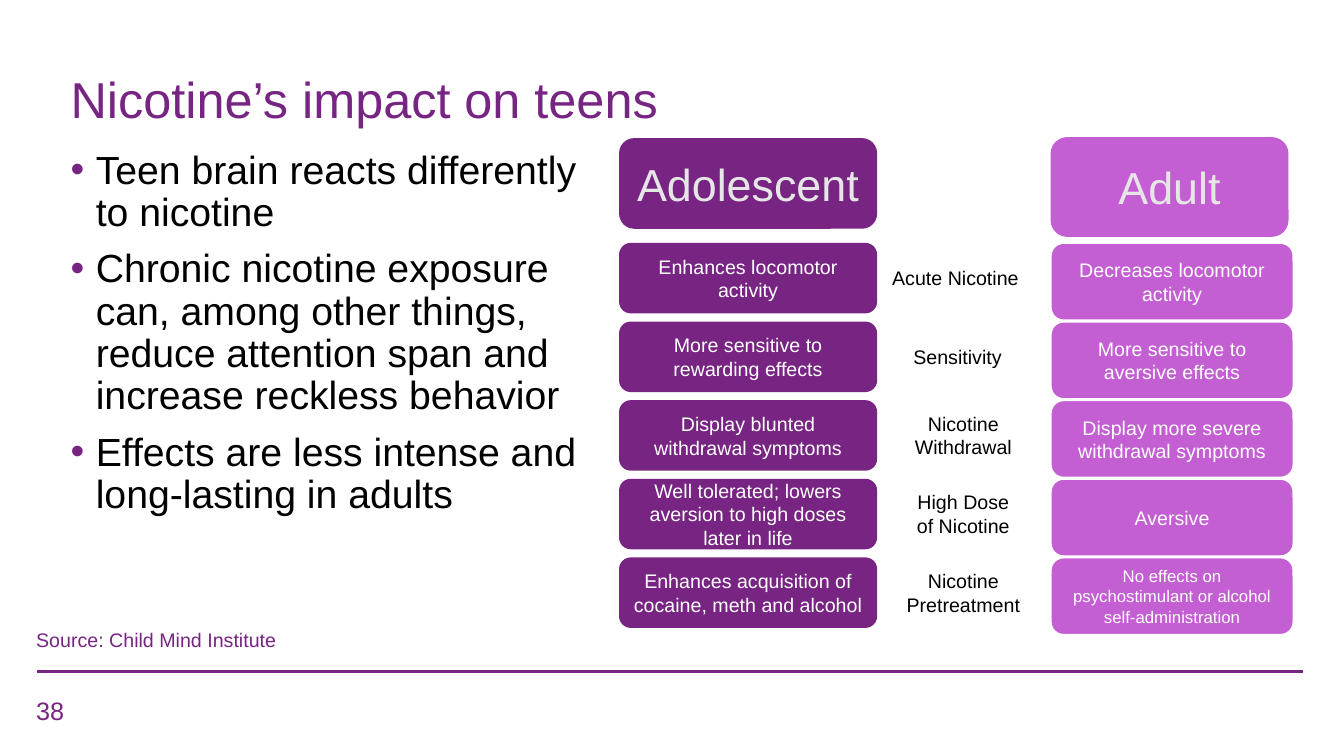
from lxml import etree
from pptx import Presentation
from pptx.dml.color import RGBColor
from pptx.enum.shapes import MSO_CONNECTOR as CONN, MSO_SHAPE as SHAPE
from pptx.enum.text import MSO_ANCHOR as ANCHOR, MSO_AUTO_SIZE as FIT, PP_ALIGN as ALIGN
from pptx.oxml.ns import qn
from pptx.util import Inches, Pt

TITLE_PURPLE = "772583"
PURPLE = "772483"
ORCHID = "C45ED3"
WHITE = "FFFFFF"
BLACK = "000000"
HEADER_GREY = "E7E6E6"

TEEN_LEFT, ADULT_LEFT, LABEL_CENTER = 6.14, 10.42, 9.555
TEEN_WIDTH, ADULT_WIDTH = 2.56, 2.41
TEEN_HEIGHT, ADULT_HEIGHT = 0.7, 0.77
ROW_TOP, ROW_STEP = 2.41, 0.78

BULLETS = [
    "Teen brain reacts differently to nicotine",
    "Chronic nicotine exposure can, among other things, "
    "reduce attention span and increase reckless behavior",
    "Effects are less intense and long-lasting in adults",
]
ROWS = [
    ("Enhances locomotor activity", ["Acute Nicotine"], 1.61,
     "Decreases locomotor activity", 14),
    ("More sensitive to rewarding effects", ["Sensitivity"], 1.19,
     "More sensitive to aversive effects", 14),
    ("Display blunted withdrawal symptoms", ["Nicotine", "Withdrawal"], 1.29,
     "Display more severe withdrawal symptoms", 14),
    ("Well tolerated; lowers aversion to high doses later in life",
     ["High Dose", "of Nicotine"], 1.23, "Aversive", 14),
    ("Enhances acquisition of cocaine, meth and alcohol",
     ["Nicotine", "Pretreatment"], 1.47,
     "No effects on psychostimulant or alcohol self-administration", 12),
]


def color(value):
    return RGBColor.from_string(value)


def place(sp, left, top, width, height):
    sp.left, sp.top = Inches(left), Inches(top)
    sp.width, sp.height = Inches(width), Inches(height)


def add_bullet(p, fill):
    pPr = p._p.get_or_add_pPr()
    pPr.set("marL", str(Inches(0.25)))
    pPr.set("indent", str(-Inches(0.25)))
    bu_clr = etree.SubElement(pPr, qn("a:buClr"))
    etree.SubElement(bu_clr, qn("a:srgbClr")).set("val", fill)
    etree.SubElement(pPr, qn("a:buChar")).set("char", "•")


def write(tf, lines, size=14, fill=BLACK, align=ALIGN.LEFT, anchor=ANCHOR.TOP,
          wrap=True, fit=FIT.NONE, spacing=1.0, before=0, bullet=None):
    tf.word_wrap = wrap
    tf.auto_size = fit
    tf.vertical_anchor = anchor
    for i, line in enumerate(lines):
        p = tf.paragraphs[0] if i == 0 else tf.add_paragraph()
        if bullet:
            add_bullet(p, bullet)
        p.alignment = align
        p.line_spacing = spacing
        p.space_before = Pt(before if i else 0)
        r = p.add_run()
        r.text = line
        r.font.name = "Arial"
        r.font.size = Pt(size)
        r.font.color.rgb = color(fill)


def add_text(s, box, lines, **fmt):
    sp = s.shapes.add_textbox(*map(Inches, box))
    write(sp.text_frame, lines, **fmt)


def add_card(s, box, text, fill, border=None, size=14, text_fill=WHITE):
    sp = s.shapes.add_shape(SHAPE.ROUNDED_RECTANGLE, *map(Inches, box))
    sp.shadow.inherit = False
    sp.fill.solid()
    sp.fill.fore_color.rgb = color(fill)
    if border:
        sp.line.color.rgb = color(border)
        sp.line.width = Pt(1.5)
    else:
        sp.line.fill.background()
    write(sp.text_frame, [text], size=size, fill=text_fill,
          align=ALIGN.CENTER, anchor=ANCHOR.MIDDLE)


def add_rule(s, left, right, y):
    line = s.shapes.add_connector(CONN.STRAIGHT, *map(Inches, (left, y, right, y)))
    line.line.color.rgb = color(TITLE_PURPLE)
    line.line.width = Pt(2.25)
    etree.SubElement(line._element.spPr, qn("a:effectLst"))


def add_label(s, lines, width, middle):
    height = 0.34 if len(lines) == 1 else 0.57
    box = (LABEL_CENTER - width / 2, middle - height / 2, width, height)
    add_text(s, box, lines, wrap=False, fit=FIT.SHAPE_TO_FIT_TEXT,
             align=ALIGN.LEFT if len(lines) == 1 else ALIGN.CENTER)


def add_comparison(s):
    add_card(s, (TEEN_LEFT, 1.37, TEEN_WIDTH, 0.9), "Adolescent", PURPLE,
             size=32, text_fill=HEADER_GREY)
    add_card(s, (ADULT_LEFT, 1.36, 2.36, 0.99), "Adult", ORCHID,
             size=32, text_fill=HEADER_GREY)
    for i, (teen, label, label_width, adult, adult_size) in enumerate(ROWS):
        top = ROW_TOP + i * ROW_STEP
        add_card(s, (TEEN_LEFT, top, TEEN_WIDTH, TEEN_HEIGHT), teen, PURPLE)
        add_label(s, label, label_width, top + TEEN_HEIGHT / 2)
        add_card(s, (ADULT_LEFT, top, ADULT_WIDTH, ADULT_HEIGHT), adult, ORCHID,
                 border=WHITE, size=adult_size)


def main():
    prs = Presentation()
    prs.slide_width, prs.slide_height = Inches(13.33), Inches(7.5)
    s = prs.slides.add_slide(prs.slide_layouts[1])
    title, body = s.placeholders
    place(title, 0.6, 0, 12.06, 1.33)
    write(title.text_frame, ["Nicotine’s impact on teens"], size=36,
          fill=TITLE_PURPLE, anchor=ANCHOR.BOTTOM, spacing=0.9)
    place(body, 0.6, 1.44, 5.33, 5.31)
    write(body.text_frame, BULLETS, size=28, spacing=0.9, before=10,
          bullet=TITLE_PURPLE)
    add_rule(s, 0.37, 12.92, 6.66)
    add_comparison(s)
    add_text(s, (0.26, 6.18, 2.6, 0.34), ["Source: Child Mind Institute"],
             fill=PURPLE, wrap=False, fit=FIT.SHAPE_TO_FIT_TEXT)
    add_text(s, (0.26, 6.85, 3, 0.4), ["38"], size=18, fill=PURPLE)
    prs.save("out.pptx")


if __name__ == "__main__":
    main()
